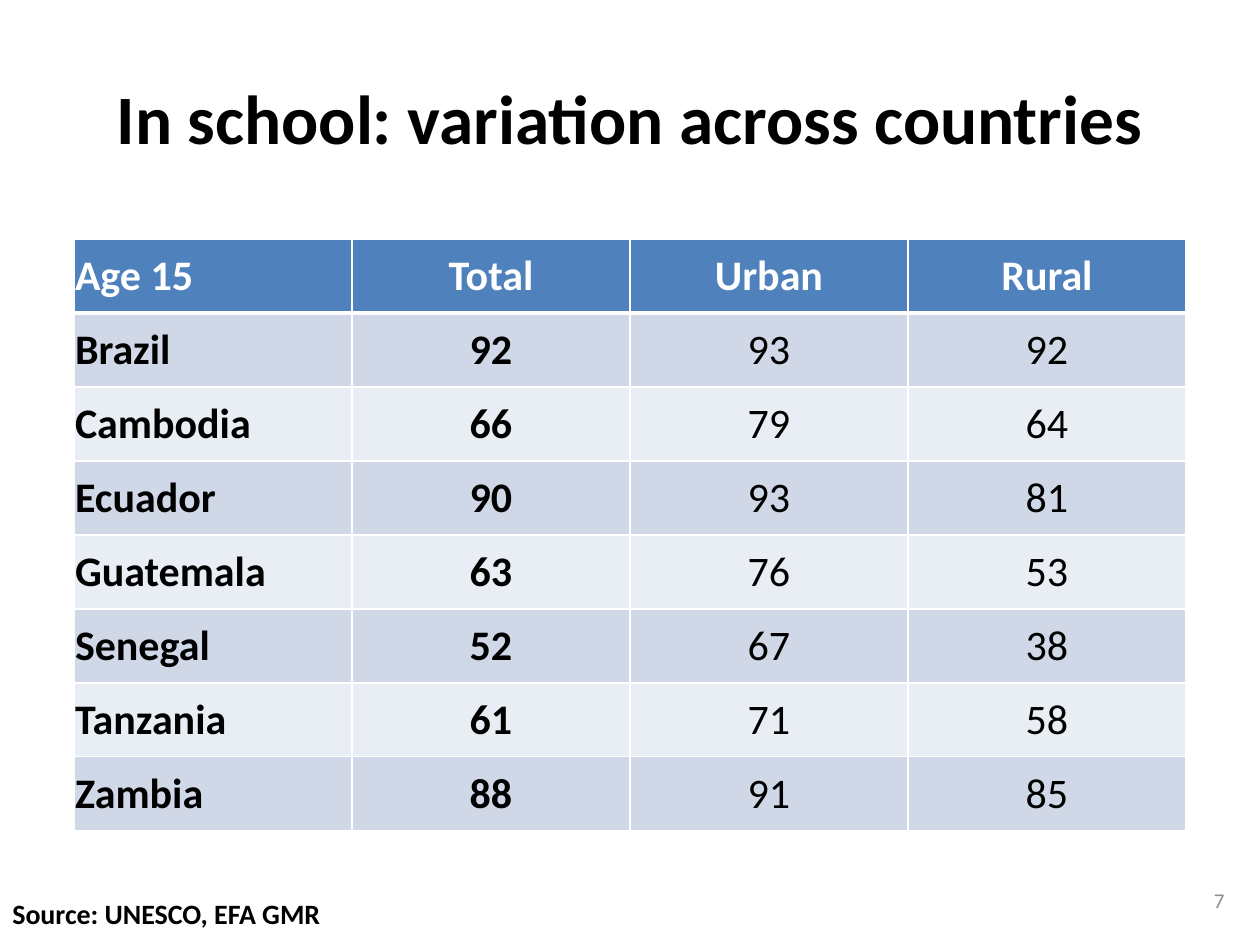
from lxml import etree
from pptx import Presentation
from pptx.dml.color import RGBColor
from pptx.enum.text import MSO_ANCHOR, PP_ALIGN
from pptx.oxml.ns import qn
from pptx.util import Emu, Pt

MIDDLE, TOP = MSO_ANCHOR.MIDDLE, MSO_ANCHOR.TOP
LEFT, CENTER, RIGHT = PP_ALIGN.LEFT, PP_ALIGN.CENTER, PP_ALIGN.RIGHT

BLACK = RGBColor(0x00, 0x00, 0x00)
WHITE = RGBColor(0xFF, 0xFF, 0xFF)
GRAY = RGBColor(0x8C, 0x8C, 0x8C)
HEADER_BLUE = RGBColor(0x4F, 0x81, 0xBD)
BANDS = (RGBColor(0xE9, 0xED, 0xF4), RGBColor(0xD0, 0xD8, 0xE8))

EMU_PER_PX = 914400 / 126
COLUMN_WIDTH, ROW_HEIGHT = 278, 74

ROWS = [
    ("Age 15", "Total", "Urban", "Rural"),
    ("Brazil", 92, 93, 92),
    ("Cambodia", 66, 79, 64),
    ("Ecuador", 90, 93, 81),
    ("Guatemala", 63, 76, 53),
    ("Senegal", 52, 67, 38),
    ("Tanzania", 61, 71, 58),
    ("Zambia", 88, 91, 85),
]


def px(length):
    return Emu(round(length * EMU_PER_PX))


def write(frame, text, size, color, bold, alignment):
    paragraph = frame.paragraphs[0]
    paragraph.text = text
    paragraph.alignment = alignment
    font = paragraph.font
    font.name, font.size, font.bold = "Calibri", Pt(size), bold
    font.color.rgb = color


presentation = Presentation()
presentation.slide_width, presentation.slide_height = px(1260), px(945)
slide = presentation.slides.add_slide(presentation.slide_layouts[6])

# Table of school attendance
table = slide.shapes.add_table(
    len(ROWS), len(ROWS[0]), px(74), px(239),
    px(COLUMN_WIDTH * len(ROWS[0])), px(ROW_HEIGHT * len(ROWS))).table
for column in table.columns:
    column.width = px(COLUMN_WIDTH)

for row_index, values in enumerate(ROWS):
    table.rows[row_index].height = px(ROW_HEIGHT)
    is_header = row_index == 0
    for column_index, value in enumerate(values):
        cell = table.cell(row_index, column_index)
        cell.margin_left = cell.margin_top = cell.margin_right = px(1)
        cell.margin_bottom = 0
        cell.vertical_anchor = MIDDLE
        write(cell.text_frame, str(value), 24, WHITE if is_header else BLACK,
              is_header or column_index < 2, CENTER if column_index else LEFT)

        # White borders, heavier under the header
        properties = cell._tc.get_or_add_tcPr()
        for side in "LRTB":
            width = Pt(3 if is_header and side == "B" else 1)
            line = etree.SubElement(properties, qn(f"a:ln{side}"), w=str(width))
            fill = etree.SubElement(line, qn("a:solidFill"))
            etree.SubElement(fill, qn("a:srgbClr"), val=str(WHITE))
        cell.fill.solid()
        cell.fill.fore_color.rgb = HEADER_BLUE if is_header else BANDS[row_index % 2]

# Page number, title and source line
TEXTS = [
    ("7", (1191, 883, 46, 34), 12, GRAY, False, RIGHT, MIDDLE),
    ("In school: variation across countries", (63, 38, 1134, 157),
     39.6, BLACK, True, CENTER, MIDDLE),
    ("Source: UNESCO, EFA GMR", (0, 890, 1308, 45), 16, BLACK, True, LEFT, TOP),
]
for text, box, size, color, bold, alignment, anchor in TEXTS:
    frame = slide.shapes.add_textbox(*map(px, box)).text_frame
    frame.word_wrap = True
    frame.vertical_anchor = anchor
    write(frame, text, size, color, bold, alignment)

presentation.save("out.pptx")
